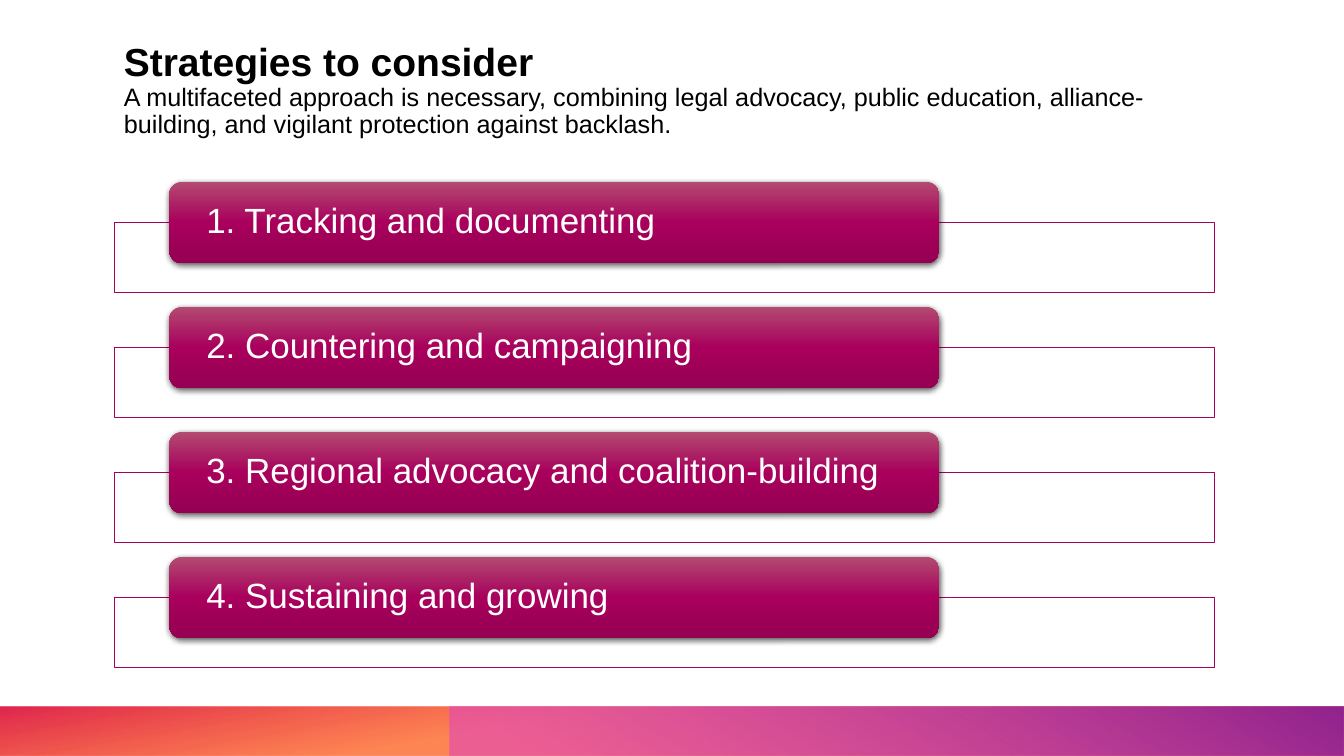
from dataclasses import dataclass
from lxml.etree import SubElement as Sub
from pptx import Presentation as Deck
from pptx.dml.color import RGBColor as Rgb
from pptx.enum.shapes import MSO_SHAPE as Kind
from pptx.enum.text import MSO_ANCHOR as Anchor, PP_ALIGN as Align
from pptx.oxml.ns import qn
from pptx.util import Pt


@dataclass(frozen=True)
class Theme:
    font: str = "Arial"
    head: float = 27.9
    body: float = 18
    label: float = 25
    ink: str = "000000"
    paper: str = "FFFFFF"
    edge: str = "A6025C"
    pill: tuple = ((0, "B24B71", 100), (50, "A8005C", 100), (100, "950052", 100))
    warm: tuple = ((62, "FE4A00", 67), (100, "DA002F", 85))
    cool: tuple = ((9, "E349BB", 62), (99, "92248E", 100))


class Painter:
    def __init__(self, slide, theme):
        self.slide = slide
        self.theme = theme

    def shape(self, kind, box):
        item = self.slide.shapes.add_shape(kind, *map(Pt, box))
        item.shadow.inherit = False
        item.line.fill.background()
        return item

    def tint(self, parent, color, alpha):
        node = Sub(parent, qn("a:srgbClr"), val=color)
        if alpha < 100:
            Sub(node, qn("a:alpha"), val=str(alpha * 1000))

    def blend(self, item, stops, angle):
        item.fill.gradient()
        item.fill.gradient_angle = angle
        group = item._element.spPr.find(".//" + qn("a:gsLst"))
        for old in list(group):
            group.remove(old)
        for place, color, alpha in stops:
            stop = Sub(group, qn("a:gs"), pos=str(place * 1000))
            self.tint(stop, color, alpha)

    def band(self, box, stops, angle):
        self.blend(self.shape(Kind.RECTANGLE, box), stops, angle)

    def frame(self, box):
        item = self.shape(Kind.RECTANGLE, box)
        item.fill.solid()
        item.fill.fore_color.rgb = Rgb.from_string(self.theme.paper)
        item.line.color.rgb = Rgb.from_string(self.theme.edge)
        item.line.width = Pt(0.5)

    def letter(self, para, text, size, color, bold=False):
        para.text = text
        para.alignment = Align.LEFT
        para.line_spacing = 0.9
        para.font.name = self.theme.font
        para.font.size = Pt(size)
        para.font.bold = bold
        para.font.color.rgb = Rgb.from_string(color)

    def pill(self, box, text):
        item = self.shape(Kind.ROUNDED_RECTANGLE, box)
        self.blend(item, self.theme.pill, 270)
        effects = item._element.spPr.find(qn("a:effectLst"))
        shade = Sub(effects, qn("a:outerShdw"), blurRad=str(Pt(4.5)),
                    dist=str(Pt(1.5)), dir="5400000", algn="ctr", rotWithShape="0")
        self.tint(shade, self.theme.ink, 63)
        frame = item.text_frame
        frame.word_wrap = True
        frame.vertical_anchor = Anchor.MIDDLE
        frame.margin_left = frame.margin_right = Pt(23.8)
        frame.margin_top = frame.margin_bottom = 0
        self.letter(frame.paragraphs[0], text, self.theme.label, self.theme.paper)

    def title(self, box, head, body):
        frame = self.slide.shapes.add_textbox(*map(Pt, box)).text_frame
        frame.word_wrap = True
        frame.vertical_anchor = Anchor.BOTTOM
        self.letter(frame.paragraphs[0], head, self.theme.head, self.theme.ink, True)
        self.letter(frame.add_paragraph(), body, self.theme.body, self.theme.ink)


def main():
    deck = Deck()
    deck.slide_width, deck.slide_height = Pt(960), Pt(540)
    theme = Theme()
    paint = Painter(deck.slides.add_slide(deck.slide_layouts[6]), theme)

    paint.band((0, 504.5, 960, 35.5), theme.warm, 100)
    paint.band((321, 504.5, 639, 35.5), theme.cool, 60)

    left, width = 81.4, 786.2
    paint.title((left, 27.4, width, 75.6), "Strategies to consider",
                "A multifaceted approach is necessary, combining legal advocacy, "
                "public education, alliance-building, and vigilant protection "
                "against backlash.")

    steps = ("Tracking and documenting", "Countering and campaigning",
             "Regional advocacy and coalition-building", "Sustaining and growing")
    for row, step in enumerate(steps):
        top = 129.8 + row * 89.3
        paint.frame((left, top + 29.2, width, 49.6))
        paint.pill((120.7, top, 550.3, 58.4), f"{row + 1}. {step}")

    deck.save("out.pptx")


if __name__ == "__main__":
    main()
